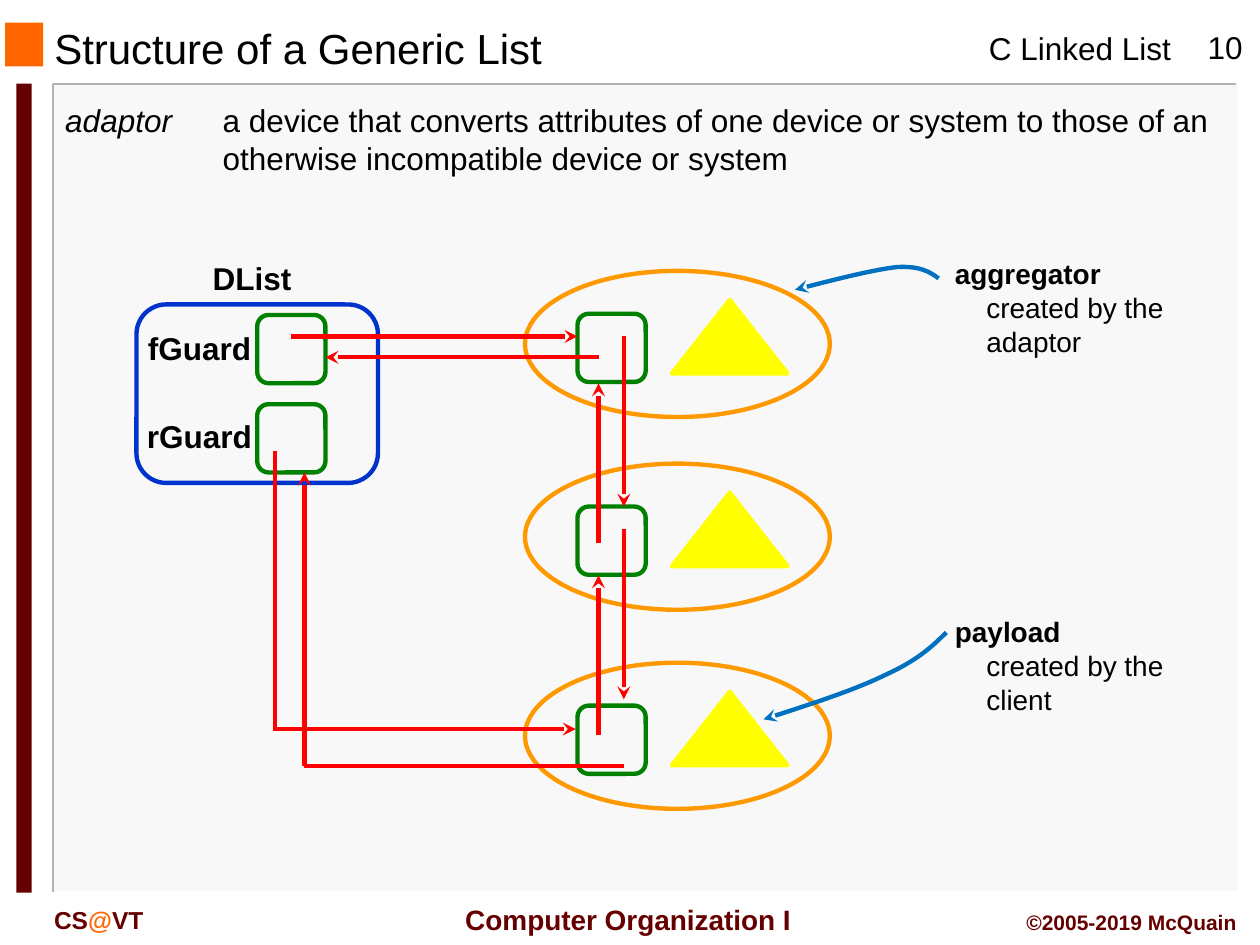
from lxml import etree
from pptx import Presentation
from pptx.dml.color import RGBColor
from pptx.enum.shapes import MSO_CONNECTOR as Connector, MSO_SHAPE as Preset
from pptx.enum.text import MSO_ANCHOR as Anchor, PP_ALIGN as Align
from pptx.oxml.ns import qn
from pptx.util import Pt

BLACK = RGBColor(0x00, 0x00, 0x00)
WHITE = RGBColor(0xFF, 0xFF, 0xFF)
PANEL = RGBColor(0xF8, 0xF8, 0xF8)
GRAY = RGBColor(0xB2, 0xB2, 0xB2)
MAROON = RGBColor(0x66, 0x00, 0x00)
BRIGHT_ORANGE = RGBColor(0xFF, 0x66, 0x00)
ORANGE = RGBColor(0xFF, 0x99, 0x00)
YELLOW = RGBColor(0xFF, 0xFF, 0x00)
GREEN = RGBColor(0x00, 0x80, 0x00)
BLUE = RGBColor(0x00, 0x33, 0xCC)
POINTER_BLUE = RGBColor(0x00, 0x70, 0xC0)
RED = RGBColor(0xFF, 0x00, 0x00)

STROKE = 2.5
BOX = 39
NODE_TOPS = (154.8, 264.96, 378.72)


def add_arrowhead(line):
    tail = etree.SubElement(line._get_or_add_ln(), qn("a:tailEnd"))
    tail.set("type", "stealth")


def add_preset(slide, preset, left, top, width, height, fill=None, outline=None):
    shape = slide.shapes.add_shape(preset, Pt(left), Pt(top), Pt(width), Pt(height))
    shape.shadow.inherit = False
    if fill is None:
        shape.fill.background()
    else:
        shape.fill.solid()
        shape.fill.fore_color.rgb = fill
    if outline is None:
        shape.line.fill.background()
    else:
        shape.line.color.rgb = outline
        shape.line.width = Pt(STROKE)
    return shape


def add_link(slide, start, end, arrow=True):
    connector = slide.shapes.add_connector(
        Connector.STRAIGHT, *[Pt(value) for value in start + end])
    connector.line.color.rgb = RED
    connector.line.width = Pt(STROKE)
    if arrow:
        add_arrowhead(connector.line)
    etree.SubElement(connector._element.spPr, qn("a:effectLst"))


def add_outline(slide, points, color, weight):
    start, *rest = [(Pt(x), Pt(y)) for x, y in points]
    builder = slide.shapes.build_freeform(*start)
    builder.add_line_segments(rest, close=False)
    shape = builder.convert_to_shape()
    shape.shadow.inherit = False
    shape.fill.background()
    shape.line.color.rgb = color
    shape.line.width = Pt(weight)
    return shape


def add_curved_arrow(slide, points):
    shape = add_outline(slide, points, POINTER_BLUE, STROKE)
    add_arrowhead(shape.line)
    segments = list(shape._element.iter(qn("a:lnTo")))
    outline = segments[0].getparent()
    for first in range(0, len(segments), 3):
        curve = etree.SubElement(outline, qn("a:cubicBezTo"))
        for segment in segments[first:first + 3]:
            curve.append(segment[0])
            outline.remove(segment)


def format_paragraph(paragraph, size, color=BLACK, align=Align.LEFT, bold=False):
    paragraph.alignment = align
    paragraph.font.name = "Arial"
    paragraph.font.size = Pt(size)
    paragraph.font.bold = bold
    paragraph.font.color.rgb = color


def hang(paragraph, indent):
    properties = paragraph._p.get_or_add_pPr()
    properties.set("marL", str(Pt(indent)))
    properties.set("indent", str(-Pt(indent)))


def add_text(slide, text, left, top, width, height, size, **style):
    box = slide.shapes.add_textbox(Pt(left), Pt(top), Pt(width), Pt(height))
    box.text_frame.word_wrap = True
    paragraph = box.text_frame.paragraphs[0]
    if text:
        paragraph.add_run().text = text
    format_paragraph(paragraph, size, **style)
    return box.text_frame


def add_frame(slide):
    add_preset(slide, Preset.RECTANGLE, 31, 48.2, 676.8, 461.5, fill=PANEL)
    add_outline(slide, [(706.5, 48.2), (30.3, 48.2), (30.3, 509.8)], GRAY, 1)
    add_outline(slide, [(707.8, 48.2), (707.8, 509.8), (31.7, 509.8)], WHITE, 1)
    add_preset(slide, Preset.RECTANGLE, 2.9, 13, 21.8, 25, fill=BRIGHT_ORANGE)
    add_preset(slide, Preset.RECTANGLE, 9.4, 47.8, 8.7, 462.4, fill=MAROON)

    add_text(slide, "C Linked List", 558, 13, 125, 29, 18)
    add_text(slide, "10", 676, 12.2, 48.2, 29, 18, align=Align.CENTER)
    add_text(slide, " Computer Organization I", 252, 512, 209.5, 26.6, 16,
             color=MAROON, align=Align.CENTER, bold=True)
    add_text(slide, "©2005-2019 McQuain", 563.8, 516.2, 150, 21.6, 12,
             color=MAROON, align=Align.RIGHT, bold=True)
    course = add_text(slide, "", 23.8, 513.4, 108, 24, 14, color=MAROON, bold=True)
    for text, color in (("CS", MAROON), ("@", BRIGHT_ORANGE), ("VT", MAROON)):
        run = course.paragraphs[0].add_run()
        run.text = text
        run.font.color.rgb = color


def add_title(slide):
    title = slide.shapes.title
    title.left, title.top, title.width, title.height = Pt(23.8), Pt(13.7), Pt(456), Pt(27.4)
    title.text_frame.text = "Structure of a Generic List"
    title.text_frame.vertical_anchor = Anchor.MIDDLE
    format_paragraph(title.text_frame.paragraphs[0], 24)


def add_definition(slide):
    frame = add_text(slide, "adaptor", 30.2, 54, 678.2, 51, 18)
    paragraph = frame.paragraphs[0]
    paragraph.runs[0].font.italic = True
    paragraph.add_run().text = ("\ta device that converts attributes of one device or system "
                                "to those of an otherwise incompatible device or system")
    hang(paragraph, 90)


def add_box(slide, left, top):
    add_preset(slide, Preset.ROUNDED_RECTANGLE, left, top, BOX, BOX, outline=GREEN)


def add_node(slide, top):
    add_preset(slide, Preset.OVAL, 300, top, 174.2, 83.5, outline=ORANGE)
    add_box(slide, 330, top + 24.5)
    add_preset(slide, Preset.ISOSCELES_TRIANGLE, 384, top + 16.6, 66, 42,
               fill=YELLOW, outline=YELLOW)


def add_list_head(slide):
    add_preset(slide, Preset.ROUNDED_RECTANGLE, 78, 174, 138, 102, outline=BLUE)
    add_text(slide, "DList", 102, 144.7, 84, 29, 18, align=Align.CENTER, bold=True)
    for name, box_top, label_top in (("fGuard", 180, 184.3), ("rGuard", 231, 234.7)):
        add_box(slide, 147, box_top)
        add_text(slide, name, 72, label_top, 84, 29, 18, align=Align.CENTER, bold=True)


def add_links(slide):
    previous_x, next_x = 342, 356.5
    add_link(slide, (166.5, 192.3), (330, 192.3))
    add_link(slide, (previous_x, 204.2), (186, 204.2))
    for next_start, previous_start in ((192.3, 310.3), (302.4, 420)):
        add_link(slide, (next_x, next_start), (next_x, next_start + 97.2))
        add_link(slide, (previous_x, previous_start), (previous_x, previous_start - 91.2))
    add_link(slide, (157, 257.8), (157, 416.6), arrow=False)
    add_link(slide, (156.2, 416.6), (329, 416.6))
    add_link(slide, (next_x, 437.6), (174, 437.6), arrow=False)
    add_link(slide, (174, 437.6), (174, 270))


def add_callout(slide, heading, detail, top, curve):
    frame = add_text(slide, heading, 538.6, top, 151.2, 65.5, 16, bold=True)
    paragraph = frame.add_paragraph()
    paragraph.add_run().text = "\t" + detail
    format_paragraph(paragraph, 16)
    hang(paragraph, 18)
    add_curved_arrow(slide, curve)


def main():
    presentation = Presentation()
    presentation.slide_width, presentation.slide_height = Pt(720), Pt(540)
    slide = presentation.slides.add_slide(presentation.slide_layouts[5])
    add_frame(slide)
    add_title(slide)
    add_definition(slide)
    add_list_head(slide)
    for top in NODE_TOPS:
        add_node(slide, top)
    add_links(slide)
    add_callout(slide, "aggregator", "created by the adaptor", 143.3,
                [(536.4, 159.1), (531.4, 155.5), (526.3, 151.9), (512.6, 152.6),
                 (499.7, 154.1), (476.6, 159.8), (454.3, 165.6)])
    add_callout(slide, "payload", "created by the client", 347.8,
                [(540.7, 361.4), (532.8, 369.4), (524.2, 377.3), (506.9, 385.2),
                 (489.6, 393.8), (463, 402.5), (436.3, 411.1)])
    presentation.save("out.pptx")


if __name__ == "__main__":
    main()
